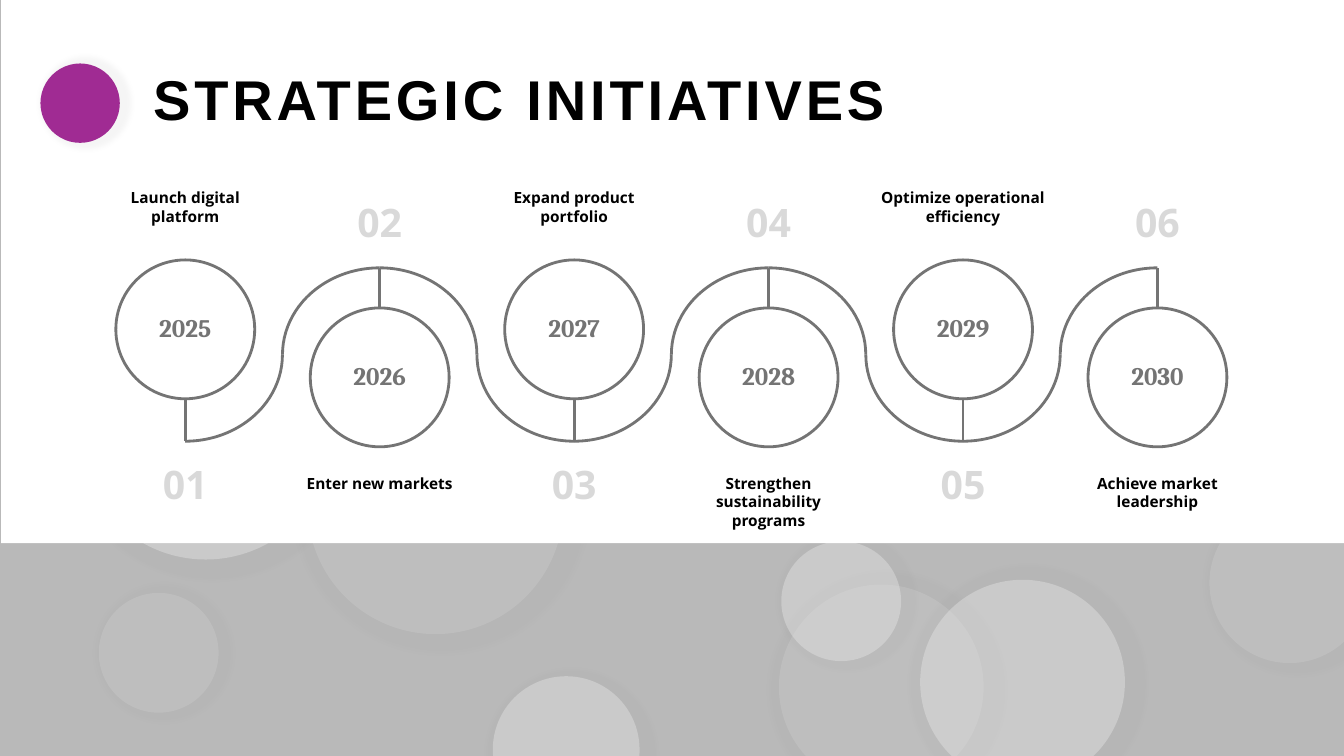
from math import acos, asin, cos, degrees, radians, sin

from lxml.etree import SubElement
from pptx import Presentation
from pptx.dml.color import RGBColor
from pptx.enum.shapes import MSO_CONNECTOR, MSO_SHAPE
from pptx.enum.text import MSO_ANCHOR, PP_ALIGN
from pptx.oxml.ns import qn
from pptx.util import Cm, Pt

COLORS = {"backdrop": "B9B9B9", "bubble": "D1D1D1", "pale": "E8E8E8", "number": "D9D9D9",
          "panel": "FFFFFF", "accent": "A02B93", "line": "747474", "text": "000000"}
WIDTH, HEIGHT = 33.87, 19.05
FIRST_X, PITCH, DIAMETER = 4.67, 4.9, 3.5
WAVE_TOP, WAVE_BOTTOM = 6.75, 11.12
BUBBLES = [
    ("bubble", 30, [(7.75, 9.53, 6.45), (2.49, 14.94, 3.02), (19.63, 14.73, 5.16), (30.48, 12.67, 4.04)]),
    ("pale", 40, [(1.96, 7.65, 6.45), (19.69, 13.64, 3.02), (23.19, 14.61, 5.16), (12.42, 17.04, 3.7)]),
]
INITIATIVES = [
    ("2025", "Launch digital platform", 2),
    ("2026", "Enter new markets", 1),
    ("2027", "Expand product portfolio", 2),
    ("2028", "Strengthen sustainability programs", 3),
    ("2029", "Optimize operational efficiency", 3),
    ("2030", "Achieve market leadership", 2),
]


def color(name):
    return RGBColor.from_string(COLORS[name])


def style(sp, fill=None, line=None):
    sp.shadow.inherit = False
    if fill:
        sp.fill.solid()
        sp.fill.fore_color.rgb = color(fill)
    else:
        sp.fill.background()
    if line:
        sp.line.color.rgb = color(line)
        sp.line.width = Pt(2)
    else:
        sp.line.fill.background()


def add_preset(s, preset, x, y, w, h, fill=None, line=None):
    sp = s.shapes.add_shape(preset, Cm(x), Cm(y), Cm(w), Cm(h))
    style(sp, fill, line)
    return sp


def add_glow(sp):
    effects = sp._element.spPr.find(qn("a:effectLst"))
    glow = SubElement(effects, qn("a:outerShdw"), blurRad="50800", dist="50800", dir="0",
                      sx="115000", sy="115000", algn="ctr", rotWithShape="0")
    black = SubElement(glow, qn("a:srgbClr"), val="000000")
    SubElement(black, qn("a:alpha"), val="4000")


def add_cut_circle(s, x, y, d, fill):
    """Draw a circle that ends at the right or bottom edge of the slide."""
    r = d / 2
    if y + d > HEIGHT:
        half = degrees(asin((HEIGHT - y - r) / r))
        start, sweep = 180 - half, 180 + 2 * half
    else:
        start = degrees(acos((WIDTH - x - r) / r))
        sweep = 360 - 2 * start
    left, top, right, bottom = Cm(x), Cm(y), Cm(min(x + d, WIDTH)), Cm(min(y + d, HEIGHT))
    outline = s.shapes.build_freeform(left, top)
    outline.add_line_segments([(right, top), (right, bottom), (left, bottom)])
    sp = outline.convert_to_shape()
    style(sp, fill)
    track = next(sp._element.iter(qn("a:path")))
    for step in list(track):
        track.remove(step)
    move = SubElement(track, qn("a:moveTo"))
    SubElement(move, qn("a:pt"), x=str(Cm(r + r * cos(radians(start)))), y=str(Cm(r + r * sin(radians(start)))))
    SubElement(track, qn("a:arcTo"), wR=str(Cm(r)), hR=str(Cm(r)),
               stAng=str(round(start * 60000)), swAng=str(round(sweep * 60000)))
    SubElement(track, qn("a:close"))
    return sp


def add_bubble(s, x, y, d, fill, opacity):
    if x + d <= WIDTH and y + d <= HEIGHT:
        sp = add_preset(s, MSO_SHAPE.OVAL, x, y, d, d, fill)
    else:
        sp = add_cut_circle(s, x, y, d, fill)
    rgb = sp._element.spPr.find(qn("a:solidFill")).find(qn("a:srgbClr"))
    SubElement(rgb, qn("a:alpha"), val=str(opacity * 1000))
    add_glow(sp)


def add_text(s, x, y, w, h, text, size, font, ink, align=PP_ALIGN.CENTER, anchor=MSO_ANCHOR.TOP):
    tf = s.shapes.add_textbox(Cm(x), Cm(y), Cm(w), Cm(h)).text_frame
    tf.word_wrap = True
    tf.vertical_anchor = anchor
    tf.margin_left = tf.margin_right = Cm(0.2)
    p = tf.paragraphs[0]
    p.text = text
    p.alignment = align
    r = p.runs[0]
    r.font.size, r.font.name, r.font.bold = Pt(size), font, True
    r.font.color.rgb = color(ink)
    return p


def add_arc(s, x, left, low):
    sp = add_preset(s, MSO_SHAPE.ARC, x - PITCH / 2, WAVE_TOP, PITCH, WAVE_BOTTOM - WAVE_TOP, line="line")
    xfrm = sp._element.spPr.get_or_add_xfrm()
    if left:
        xfrm.set("flipH", "1")
    if low:
        xfrm.set("flipV", "1")


def add_stem(s, x, top, bottom):
    stem = s.shapes.add_connector(MSO_CONNECTOR.STRAIGHT, Cm(x), Cm(top), Cm(x), Cm(bottom))
    stem.line.color.rgb = color("line")
    stem.line.width = Pt(2)
    SubElement(stem._element.spPr, qn("a:effectLst"))


def add_initiative(s, i, year, caption, lines):
    x = FIRST_X + i * PITCH
    upper = i % 2 == 0
    circle_y = 6.55 if upper else 7.76
    if i < len(INITIATIVES) - 1:
        add_arc(s, x, False, upper)
    if i > 0:
        add_arc(s, x, True, upper)
    if upper:
        add_stem(s, x, circle_y + DIAMETER, WAVE_BOTTOM)
    else:
        add_stem(s, x, WAVE_TOP, circle_y)
    left = x - DIAMETER / 2
    add_preset(s, MSO_SHAPE.OVAL, left, circle_y, DIAMETER, DIAMETER, "panel", "line")
    add_text(s, left, circle_y + 1.19, DIAMETER, 1.02, year, 18, "Cambria", "line")
    add_text(s, x - 1.5, 11.5 if upper else 4.9, 3, 1.4, f"{i + 1:02}", 28, "Open Sans", "number",
             anchor=MSO_ANCHOR.MIDDLE)
    add_text(s, x - 2.33, 4.62 if upper else 11.82, 4.66, 0.25 + 0.47 * lines, caption, 11,
             "Open Sans", "text")


def main():
    prs = Presentation()
    prs.slide_width, prs.slide_height = Cm(WIDTH), Cm(HEIGHT)
    s = prs.slides.add_slide(prs.slide_layouts[6])
    s.background.fill.solid()
    s.background.fill.fore_color.rgb = color("backdrop")
    for fill, opacity, bubbles in BUBBLES:
        for x, y, d in bubbles:
            add_bubble(s, x, y, d, fill, opacity)
    add_preset(s, MSO_SHAPE.RECTANGLE, 0.03, 0, WIDTH - 0.03, 13.69, "panel")
    p = add_text(s, 3.66, 1.24, 27.9, 2.72, "STRATEGIC INITIATIVES", 40, "Arial", "text",
                 PP_ALIGN.LEFT, MSO_ANCHOR.MIDDLE)
    p.line_spacing = 0.88
    p.runs[0].font._element.set("spc", "280")
    add_glow(add_preset(s, MSO_SHAPE.OVAL, 1.02, 1.6, 2, 2, "accent"))
    for i, (year, caption, lines) in enumerate(INITIATIVES):
        add_initiative(s, i, year, caption, lines)
    prs.save("out.pptx")


if __name__ == "__main__":
    main()
